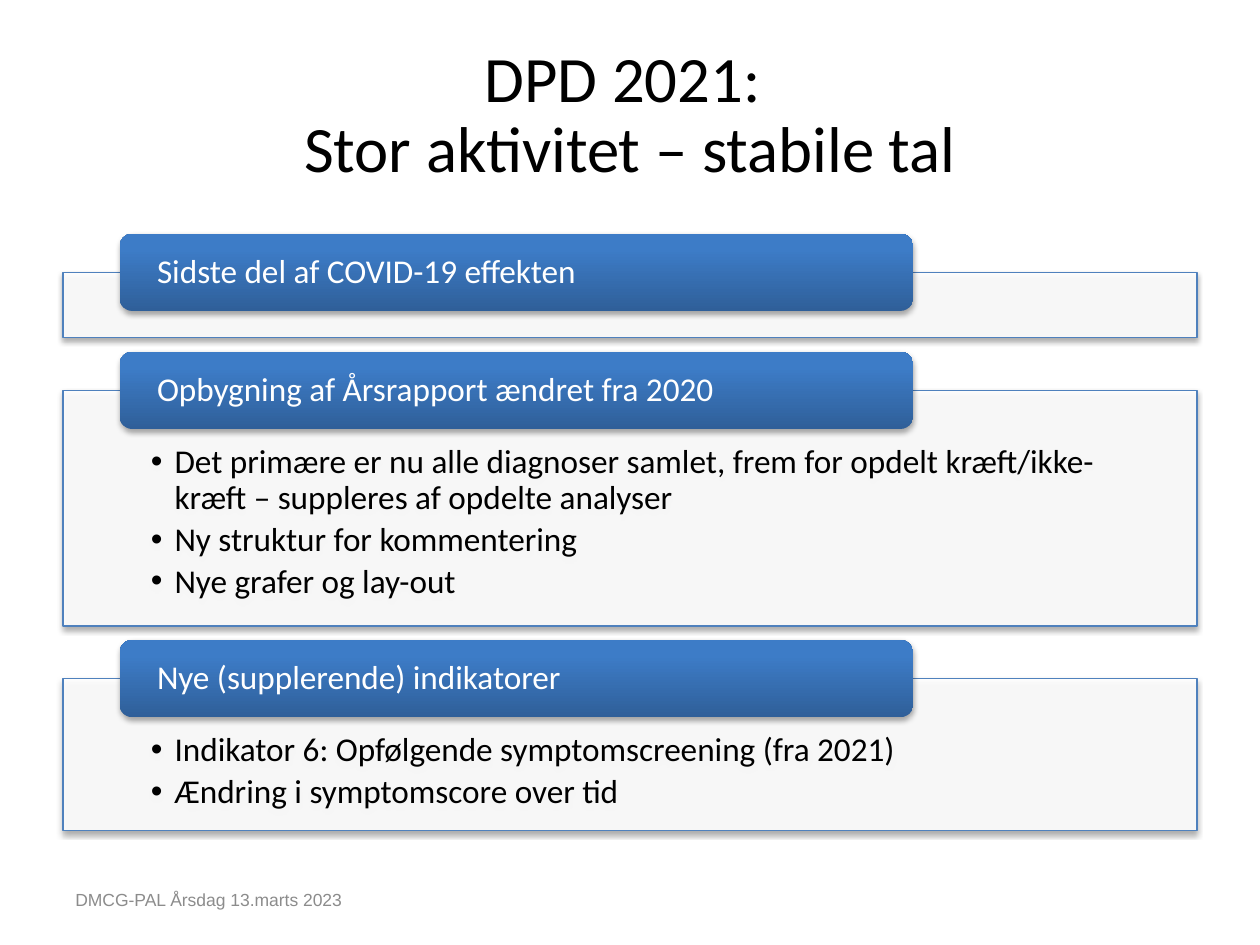
"""Build the DPD 2021 slide with three headed panels."""
from lxml import etree
from pptx import Presentation
from pptx.dml.color import RGBColor
from pptx.enum.shapes import MSO_SHAPE
from pptx.enum.text import MSO_ANCHOR, MSO_AUTO_SIZE, PP_ALIGN
from pptx.oxml.ns import qn
from pptx.util import Cm, Pt

TITLE = "DPD 2021: \vStor aktivitet – stabile tal"
FOOTER = "DMCG-PAL Årsdag 13.marts 2023"
SECTIONS = [
    ("Sidste del af COVID-19 effekten", 1.32, []),
    ("Opbygning af Årsrapport ændret fra 2020", 4.75, [
        "Det primære er nu alle diagnoser samlet, frem for opdelt "
        "kræft/ikke-kræft – suppleres af opdelte analyser",
        "Ny struktur for kommentering",
        "Nye grafer og lay-out",
    ]),
    ("Nye (supplerende) indikatorer", 3.07, [
        "Indikator 6: Opfølgende symptomscreening (fra 2021)",
        "Ændring i symptomscore over tid",
    ]),
]

BLACK = RGBColor(0x00, 0x00, 0x00)
WHITE = RGBColor(0xFF, 0xFF, 0xFF)
GRAY = RGBColor(0x8C, 0x8C, 0x8C)
BORDER_BLUE = RGBColor(0x4F, 0x81, 0xBD)
DARK_BLUE = RGBColor(0x2F, 0x5F, 0x99)
BRIGHT_BLUE = RGBColor(0x3D, 0x7C, 0xC7)
RECTANGLE, ROUNDED = MSO_SHAPE.RECTANGLE, MSO_SHAPE.ROUNDED_RECTANGLE
TOP, MIDDLE = MSO_ANCHOR.TOP, MSO_ANCHOR.MIDDLE
LEFT, CENTER = PP_ALIGN.LEFT, PP_ALIGN.CENTER
NO_AUTOFIT = MSO_AUTO_SIZE.NONE

MARGIN, PANEL_WIDTH = 1.27, 22.86
FIRST_PANEL_TOP, PANEL_GAP = 5.49, 1.06
HEADER_LEFT, HEADER_WIDTH, HEADER_HEIGHT = 2.41, 16, 1.56
BULLET_INDENT = 0.48

TITLE_FONT = {"name": "Calibri", "size": Pt(37), "color": BLACK}
HEADER_FONT = {"name": "Calibri", "size": Pt(19), "color": WHITE}
BULLET_FONT = {"name": "Calibri", "size": Pt(19), "color": BLACK}
FOOTER_FONT = {"name": "Arial", "size": Pt(10), "color": GRAY}


def set_attributes(target, values):
    for name, value in values.items():
        setattr(target, name, value)


def write_text(shape, lines, font, anchor=MIDDLE, align=LEFT,
               insets=(0.25, 0.13, 0.25, 0.13), space_after=0):
    frame = shape.text_frame
    sides = ("margin_left", "margin_top", "margin_right", "margin_bottom")
    set_attributes(frame, {"text": "\n".join(lines), "word_wrap": True,
                           "auto_size": NO_AUTOFIT, "vertical_anchor": anchor})
    set_attributes(frame, dict(zip(sides, map(Cm, insets))))
    for paragraph in frame.paragraphs:
        set_attributes(paragraph, {"alignment": align, "line_spacing": 0.9,
                                   "space_before": Pt(0), "space_after": Pt(space_after)})
        for run in paragraph.runs:
            set_attributes(run.font, {"name": font["name"], "size": font["size"]})
            run.font.color.rgb = font["color"]


def add_bullets(shape):
    for paragraph in shape.text_frame.paragraphs:
        properties = paragraph._p.get_or_add_pPr()
        properties.set("marL", str(Cm(BULLET_INDENT)))
        properties.set("indent", str(-Cm(BULLET_INDENT)))
        etree.SubElement(properties, qn("a:buFont"), typeface="Arial")
        etree.SubElement(properties, qn("a:buChar"), char="•")


def add_shadow(shape):
    shape.shadow.inherit = False
    effects = shape._element.spPr.find(qn("a:effectLst"))
    shadow = etree.SubElement(effects, qn("a:outerShdw"), blurRad=str(Pt(3.1)),
                              dist=str(Pt(1.8)), dir="5400000", rotWithShape="0")
    color = etree.SubElement(shadow, qn("a:srgbClr"), val=str(BLACK))
    etree.SubElement(color, qn("a:alpha"), val="35000")


def add_panel(slide, top, height, bullets):
    panel = slide.shapes.add_shape(RECTANGLE, Cm(MARGIN), Cm(top), Cm(PANEL_WIDTH), Cm(height))
    panel.fill.solid()
    panel.fill.fore_color.rgb = WHITE
    color = panel._element.spPr.find(qn("a:solidFill")).find(qn("a:srgbClr"))
    etree.SubElement(color, qn("a:alpha"), val="90000")
    panel.line.color.rgb = BORDER_BLUE
    panel.line.width = Pt(0.75)
    add_shadow(panel)
    if bullets:
        write_text(panel, bullets, BULLET_FONT, anchor=TOP,
                   insets=(1.77, 1.1, 1.77, 0.38), space_after=3.4)
        add_bullets(panel)


def add_header(slide, top, text):
    header = slide.shapes.add_shape(ROUNDED, Cm(HEADER_LEFT), Cm(top),
                                    Cm(HEADER_WIDTH), Cm(HEADER_HEIGHT))
    header.fill.gradient()
    header.fill.gradient_angle = 90
    stops = ((0, DARK_BLUE), (0.8, BRIGHT_BLUE))
    for stop, (position, color) in zip(header.fill.gradient_stops, stops):
        stop.position = position
        stop.color.rgb = color
    header.line.fill.background()
    add_shadow(header)
    write_text(header, [text], HEADER_FONT, insets=(0.68, 0, 0.68, 0))


def main():
    presentation = Presentation()
    set_attributes(presentation, {"slide_width": Cm(25.4), "slide_height": Cm(19.05)})
    slide = presentation.slides.add_slide(presentation.slide_layouts[5])

    title = slide.shapes.title
    set_attributes(title, {"left": Cm(MARGIN), "top": Cm(0.76),
                           "width": Cm(PANEL_WIDTH), "height": Cm(3.18)})
    write_text(title, [TITLE], TITLE_FONT, align=CENTER)

    top = FIRST_PANEL_TOP
    for heading, height, bullets in SECTIONS:
        add_panel(slide, top, height, bullets)
        add_header(slide, top - HEADER_HEIGHT / 2, heading)
        top += height + PANEL_GAP

    footer = slide.shapes.add_textbox(Cm(MARGIN), Cm(17.65), Cm(5.92), Cm(1.02))
    write_text(footer, [FOOTER], FOOTER_FONT, space_after=6)
    presentation.save("out.pptx")


if __name__ == "__main__":
    main()
